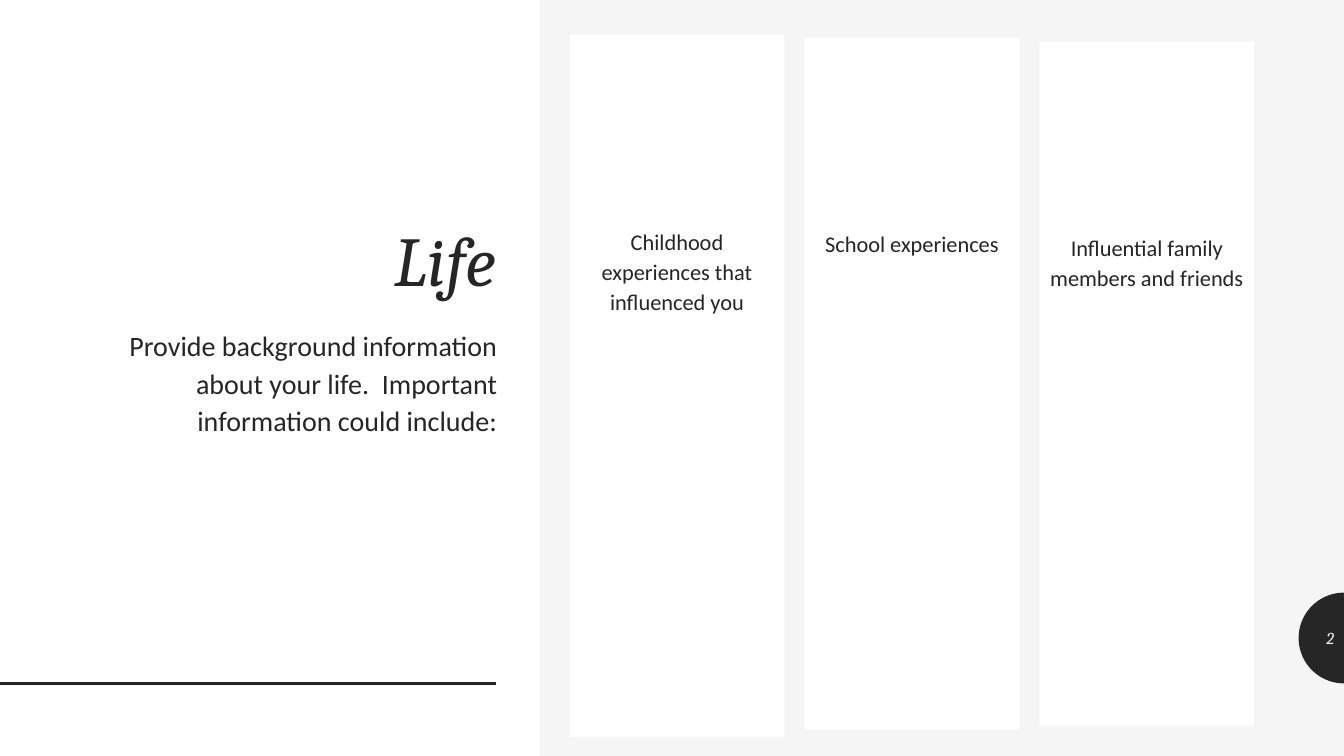
"""Build the Life slide with three topic columns."""
from math import cos, pi, sin

from lxml import etree
from pptx import Presentation
from pptx.dml.color import RGBColor
from pptx.enum.shapes import MSO_CONNECTOR, MSO_SHAPE
from pptx.enum.text import MSO_ANCHOR, MSO_AUTO_SIZE, PP_ALIGN
from pptx.oxml.ns import qn
from pptx.util import Inches, Pt

TITLE = "Life"
INTRO = ("Provide background information about your life.  "
         "Important information could include:")
TOPICS = [
    ("Childhood experiences that influenced you", 0.35, 6.96),
    ("School experiences", 0.37, 6.87),
    ("Influential family members and friends", 0.41, 6.79),
]
NUMBER = "2"

DARK = RGBColor(0x26, 0x26, 0x26)
PALE = RGBColor(0xF5, 0xF5, 0xF5)
WHITE = RGBColor(0xFF, 0xFF, 0xFF)
RECT = MSO_SHAPE.RECTANGLE
LINE = MSO_CONNECTOR.STRAIGHT
LEFT, CENTER, RIGHT = PP_ALIGN.LEFT, PP_ALIGN.CENTER, PP_ALIGN.RIGHT
TOP, MIDDLE, BOTTOM = MSO_ANCHOR.TOP, MSO_ANCHOR.MIDDLE, MSO_ANCHOR.BOTTOM
FIXED = MSO_AUTO_SIZE.NONE

WIDTH, HEIGHT = 13.33, 7.5
FIRST, STEP, COLUMN = 5.65, 2.33, 2.13
RADIUS, MID = 0.45, 6.33
ARC = 48

SERIF = {"name": "Cambria", "italic": True}
SANS = {"name": "Calibri"}


def box(*sizes):
    """Convert sizes in inches to lengths."""
    return [Inches(size) for size in sizes]


def paint(shape, color):
    """Give a shape a plain fill without line or shadow."""
    shape.fill.solid()
    shape.fill.fore_color.rgb = color
    shape.line.fill.background()
    shape.shadow.inherit = False


def write(shape, text, frame, para, font, color=DARK):
    """Put one formatted paragraph in a shape."""
    body = shape.text_frame
    body.text = text
    line = body.paragraphs[0]
    frame = {"word_wrap": True, "auto_size": FIXED, **frame}
    for target, values in ((body, frame), (line, para), (line.runs[0].font, font)):
        for key, value in values.items():
            setattr(target, key, value)
    line.runs[0].font.color.rgb = color


def main():
    """Draw the slide and save it."""
    deck = Presentation()
    deck.slide_width, deck.slide_height = box(WIDTH, HEIGHT)
    slide = deck.slides.add_slide(deck.slide_layouts[5])
    slide.background.fill.solid()
    slide.background.fill.fore_color.rgb = PALE
    shapes = slide.shapes

    points = [box(WIDTH - RADIUS * sin(pi * i / ARC), MID - RADIUS * cos(pi * i / ARC))
              for i in range(ARC + 1)]
    path = shapes.build_freeform(*points[0])
    path.add_line_segments(points[1:], close=True)
    paint(path.convert_to_shape(), DARK)

    paint(shapes.add_shape(RECT, *box(0, 0, 5.35, HEIGHT)), WHITE)
    rule = shapes.add_connector(LINE, *box(0, 6.78, 4.92, 6.78))
    rule.line.color.rgb = DARK
    rule.line.width = Pt(2)
    etree.SubElement(rule.element.spPr, qn("a:effectLst"))

    title = shapes.title
    title.element.getparent().append(title.element)
    title.left, title.top, title.width, title.height = box(0.83, 0.61, 4.19, 2.43)
    write(title, TITLE, {"vertical_anchor": BOTTOM},
          {"alignment": RIGHT, "line_spacing": 0.9}, {"size": Pt(50), **SERIF})

    intro = shapes.add_textbox(*box(0.83, 3.17, 4.2, 3.12))
    write(intro, INTRO, {"vertical_anchor": TOP},
          {"alignment": RIGHT, "line_spacing": 1.12}, {"size": Pt(20), **SANS})

    inset = {"margin_left": Inches(0.08), "margin_right": Inches(0.08),
             "margin_top": Inches(1.88), "margin_bottom": 0, "vertical_anchor": TOP}
    for i, (topic, top, tall) in enumerate(TOPICS):
        card = shapes.add_shape(RECT, *box(FIRST + i * STEP, top, COLUMN, tall))
        paint(card, WHITE)
        write(card, topic, inset, {"alignment": CENTER, "line_spacing": 1.12},
              {"size": Pt(16), **SANS})

    badge = shapes.add_textbox(*box(WIDTH - RADIUS, 6.13, RADIUS, 0.4))
    write(badge, NUMBER, {"vertical_anchor": MIDDLE}, {"alignment": RIGHT},
          {"size": Pt(12), **SERIF}, PALE)

    deck.save("out.pptx")


if __name__ == "__main__":
    main()
